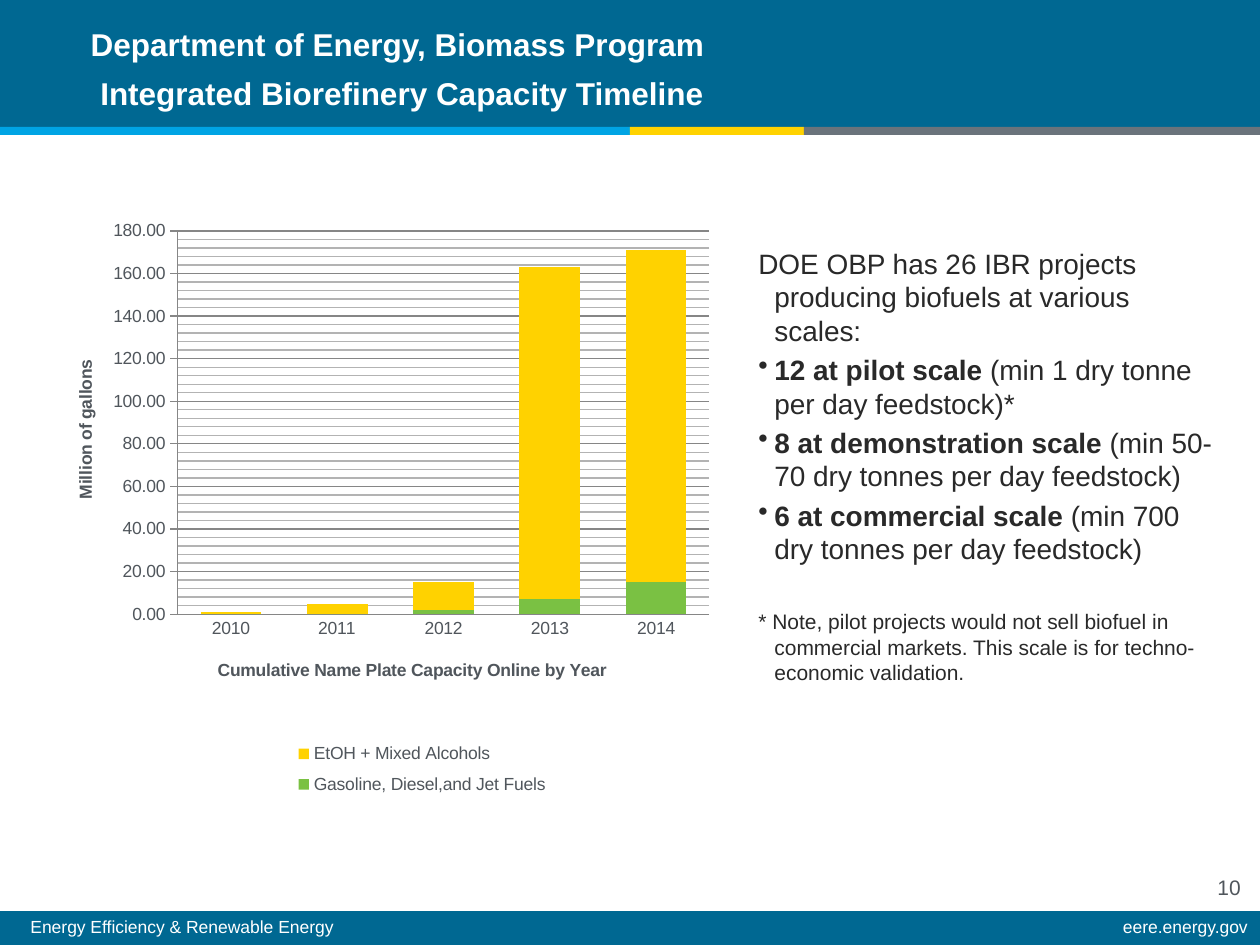
from lxml import etree
from pptx import Presentation
from pptx.chart.data import CategoryChartData
from pptx.dml.color import RGBColor
from pptx.enum.chart import XL_CHART_TYPE, XL_LEGEND_POSITION, XL_TICK_MARK
from pptx.enum.shapes import MSO_SHAPE
from pptx.enum.text import MSO_ANCHOR, PP_ALIGN
from pptx.oxml.ns import qn
from pptx.util import Pt

EMU_PER_PX = 914400 / 126
RECT = MSO_SHAPE.RECTANGLE
LEFT, CENTER, RIGHT = PP_ALIGN.LEFT, PP_ALIGN.CENTER, PP_ALIGN.RIGHT
TOP, BOTTOM = MSO_ANCHOR.TOP, MSO_ANCHOR.BOTTOM
STACKED = XL_CHART_TYPE.COLUMN_STACKED
LEGEND_RIGHT = XL_LEGEND_POSITION.RIGHT
TICK_NONE, TICK_CROSS = XL_TICK_MARK.NONE, XL_TICK_MARK.CROSS

FONT = "Arial"
NAVY, SKY, YELLOW, GRAY = "006892", "00A4E4", "FFD200", "6A737B"
GREEN, WHITE, INK, SLATE = "7AC143", "FFFFFF", "292929", "50565C"
GRID, MINOR_GRID = "868686", "B3B3B3"


def px(length):
    return round(length * EMU_PER_PX)


def rgb(value):
    return RGBColor.from_string(value)


def add_band(slide, box, color):
    band = slide.shapes.add_shape(RECT, *map(px, box))
    band.shadow.inherit = False
    band.fill.solid()
    band.fill.fore_color.rgb = rgb(color)
    band.line.fill.background()


def add_text(slide, box, paragraphs, *, size=10, color=WHITE, bold=False,
             align=LEFT, anchor=TOP, spacing=None):
    """Each paragraph is a dict: runs [(text, bold)], and optional size, before, hang, bullet."""
    frame = slide.shapes.add_textbox(*map(px, box)).text_frame
    frame.word_wrap = True
    frame.vertical_anchor = anchor
    for index, item in enumerate(paragraphs):
        para = frame.paragraphs[0] if index == 0 else frame.add_paragraph()
        para.alignment = align
        if spacing:
            para.line_spacing = spacing
        if "before" in item:
            para.space_before = Pt(item["before"])
        if "hang" in item:
            props = para._p.get_or_add_pPr()
            props.set("marL", str(px(item["hang"])))
            props.set("indent", str(-px(item["hang"])))
            if item.get("bullet"):
                etree.SubElement(props, qn("a:buChar")).set("char", "•")
            else:
                etree.SubElement(props, qn("a:buNone"))
        for text, run_bold in item["runs"]:
            for number, line in enumerate(text.split("\n")):
                if number:
                    para.add_line_break()
                run = para.add_run()
                run.text = line
                run.font.name = FONT
                run.font.size = Pt(item.get("size", size))
                run.font.bold = bold or run_bold
                run.font.color.rgb = rgb(color)


def header(slide, box):
    left, top, width, height = box
    stripe = 8
    add_band(slide, (left, top, width, height - stripe), NAVY)
    # Three-colour stripe below the title
    edges = (0, 630, 804, width)
    for start, end, color in zip(edges, edges[1:], (SKY, YELLOW, GRAY)):
        add_band(slide, (left + start, top + height - stripe, end - start, stripe), color)
    title = "Department of Energy, Biomass Program \nIntegrated Biorefinery Capacity Timeline"
    add_text(slide, (left + 24, top + 40, 756, 78), [{"runs": [(title, True)]}],
             size=18, align=CENTER, anchor=BOTTOM, spacing=Pt(28))


def footer(slide, box):
    left, top, width, height = box
    add_band(slide, box, NAVY)
    add_text(slide, (left + 18, top + 1, 700, height - 1),
             [{"runs": [("Energy Efficiency & Renewable Energy", False)]}], spacing=0.9)
    add_text(slide, (left + width - 505, top + 1, 505, height - 1),
             [{"runs": [("eere.energy.gov", False)]}], align=RIGHT, spacing=0.9)
    # Page number above the bar
    add_text(slide, (left + width - 55, top - 43, 54, 38),
             [{"runs": [("10", False)]}], size=12, color=SLATE)


def set_layout(part, **values):
    """Give a chart part a fixed position, in fractions of the chart."""
    for old in part.findall(qn("c:layout")):
        part.remove(old)
    layout = etree.Element(qn("c:layout"))
    manual = etree.SubElement(layout, qn("c:manualLayout"))
    if part.tag == qn("c:plotArea"):
        etree.SubElement(manual, qn("c:layoutTarget")).set("val", "inner")
    for mode in ("xMode", "yMode"):
        etree.SubElement(manual, qn(f"c:{mode}")).set("val", "edge")
    for key, value in values.items():
        etree.SubElement(manual, qn(f"c:{key}")).set("val", str(value))
    overlay = part.find(qn("c:overlay"))
    if overlay is None:
        part.insert(0, layout)
    else:
        overlay.addprevious(layout)


def color_minor_gridlines(axis, color):
    node = axis._element.find(qn("c:minorGridlines"))
    for tag in ("c:spPr", "a:ln", "a:solidFill", "a:srgbClr"):
        node = etree.SubElement(node, qn(tag))
    node.set("val", color)


def style_axis(axis, title, tick, **position):
    axis.major_tick_mark = tick
    axis.minor_tick_mark = TICK_NONE
    axis.format.line.color.rgb = rgb(GRID)
    run = axis.axis_title.text_frame.paragraphs[0].add_run()
    run.text = title
    run.font.name = FONT
    run.font.size = Pt(10)
    run.font.bold = True
    run.font.color.rgb = rgb(SLATE)
    set_layout(axis.axis_title._element, **position)


def capacity_chart(slide, box):
    data = CategoryChartData(number_format="0.00")
    data.categories = ["2010", "2011", "2012", "2013", "2014"]
    data.add_series("Gasoline, Diesel,and Jet Fuels", (0, 0, 2, 7, 15))
    data.add_series("EtOH + Mixed Alcohols", (1, 5, 13, 156, 156))
    chart = slide.shapes.add_chart(STACKED, *map(px, box), data).chart
    chart.has_title = False
    chart.font.name = FONT
    chart.font.size = Pt(10)
    chart.font.color.rgb = rgb(SLATE)

    # Columns
    plot = chart.plots[0]
    plot.gap_width, plot.overlap, plot.vary_by_categories = 75, 100, False
    for series, color in zip(plot.series, (GREEN, YELLOW)):
        series.format.fill.solid()
        series.format.fill.fore_color.rgb = rgb(color)
    plot_area = chart._chartSpace.find(f".//{qn('c:plotArea')}")
    set_layout(plot_area, x=0.184, y=0.02, w=0.666, h=0.641)

    # Axes and gridlines
    style_axis(chart.category_axis, "Cumulative Name Plate Capacity Online by Year",
               TICK_NONE, x=0.23, y=0.73)
    gallons = chart.value_axis
    style_axis(gallons, "Million of gallons", TICK_CROSS, x=0.05, y=0.23)
    gallons.minimum_scale, gallons.maximum_scale = 0, 180
    gallons.major_unit, gallons.minor_unit = 20, 4
    gallons.tick_labels.number_format = "0.00"
    gallons.tick_labels.number_format_is_linked = False
    gallons.has_major_gridlines = gallons.has_minor_gridlines = True
    gallons.major_gridlines.format.line.color.rgb = rgb(GRID)
    color_minor_gridlines(gallons, MINOR_GRID)

    # Legend
    chart.has_legend = True
    chart.legend.position = LEGEND_RIGHT
    chart.legend.include_in_layout = False
    set_layout(chart.legend._element, x=0.32, y=0.86, w=0.34, h=0.12)


def project_scales(slide, box):
    hang = 16
    scales = [("12 at pilot scale", " (min 1 dry tonne per day feedstock)*"),
              ("8 at demonstration scale", " (min 50-70 dry tonnes per day feedstock)"),
              ("6 at commercial scale", " (min 700 dry tonnes per day feedstock)")]
    intro = "DOE OBP has 26 IBR projects producing biofuels at various scales:"
    note = ("* Note, pilot projects would not sell biofuel in\n"
            "commercial markets. This scale is for techno-economic validation.")
    paragraphs = [{"runs": [(intro, False)], "hang": hang}]
    paragraphs += [{"runs": [(scale, True), (detail, False)], "hang": hang,
                    "before": 3.2, "bullet": True} for scale, detail in scales]
    paragraphs.append({"runs": [(note, False)], "hang": hang, "before": 25, "size": 12})
    add_text(slide, box, paragraphs, size=16, color=INK)


def main():
    prs = Presentation()
    prs.slide_width, prs.slide_height = px(1260), px(945)
    slide = prs.slides.add_slide(prs.slide_layouts[6])
    header(slide, (0, 0, 1260, 135))
    footer(slide, (0, 911, 1260, 34))
    project_scales(slide, (746, 240, 483, 577))
    capacity_chart(slide, (31, 219, 798, 598))
    prs.save("out.pptx")


if __name__ == "__main__":
    main()
